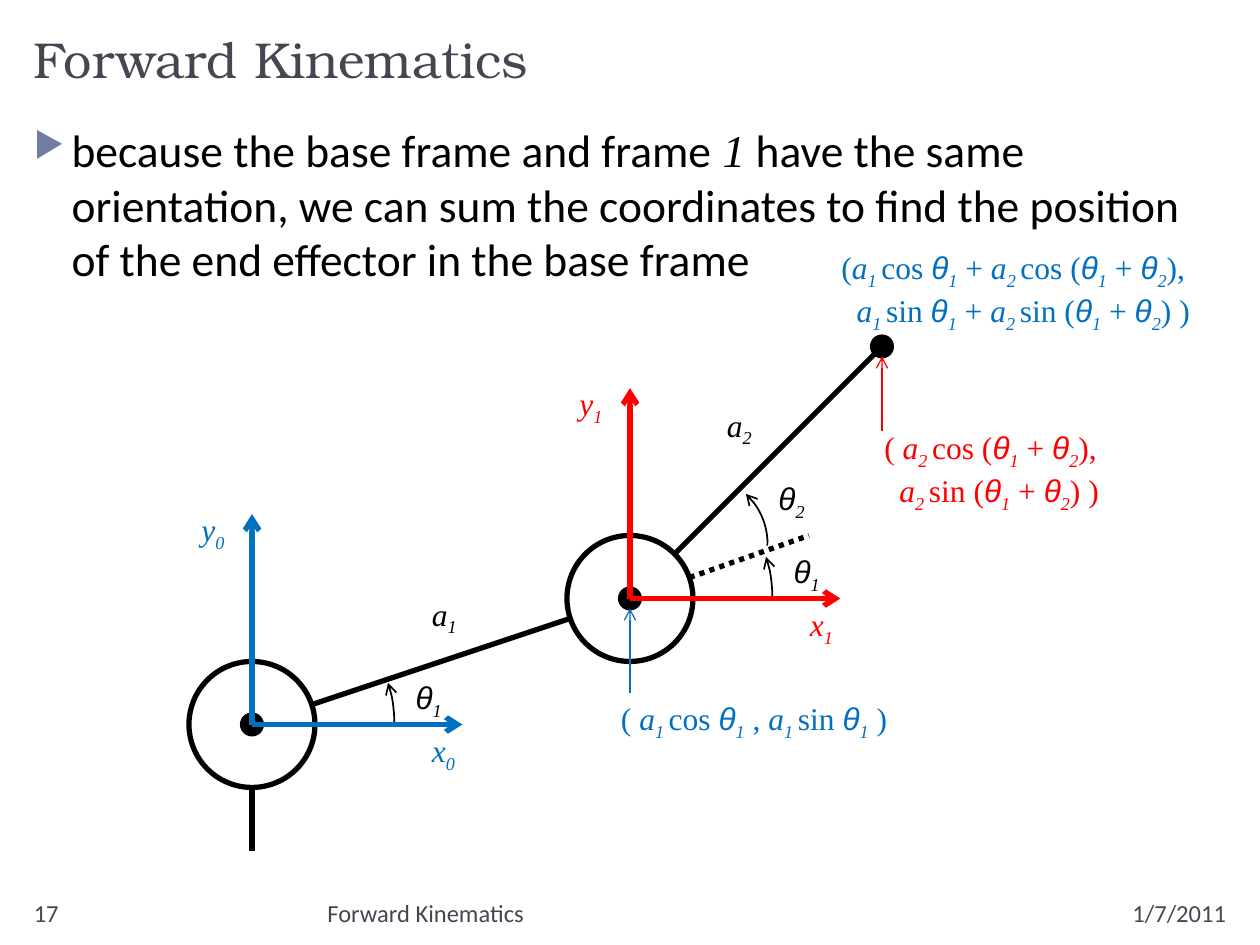
"""Build the forward kinematics slide of a two-link planar arm."""
from dataclasses import dataclass
from itertools import groupby

from lxml.etree import SubElement
from pptx import Presentation
from pptx.dml.color import RGBColor
from pptx.enum.dml import MSO_LINE
from pptx.enum.shapes import MSO_CONNECTOR, MSO_SHAPE
from pptx.enum.text import MSO_ANCHOR, PP_ALIGN
from pptx.oxml.ns import qn
from pptx.util import Inches, Pt

COLORS = {
    "black": "000000", "white": "FFFFFF", "slate": "464653",
    "bullet": "727CA3", "base": "0070C0", "joint": "FF0000",
}
SERIF = "Times New Roman"
BASE, JOINT, EFFECTOR = (2, 5.75), (5, 4.75), (7, 2.75)


@dataclass(frozen=True)
class Line:
    start: tuple
    end: tuple
    color: str = "black"
    width: float = 3
    arrow: bool = False
    dotted: bool = False


@dataclass(frozen=True)
class Label:
    left: float
    top: float
    width: float
    lines: tuple
    color: str = "black"


@dataclass(frozen=True)
class Arc:
    start: tuple
    control_one: tuple
    control_two: tuple
    end: tuple


LINKS = (
    Line((2, 6.75), (2, 5.83)),
    Line(JOINT, (6.42, 4.25), dotted=True),
    Line(JOINT, EFFECTOR),
    Line(BASE, JOINT),
)
POINTERS = (
    Line((5, 5.5), (5, 4.83), "base", 0.75, arrow=True),
    Line((7, 3.42), (7, 2.83), "joint", 0.75, arrow=True),
)
LABELS = (
    Label(3.33, 4.67, 0.41, ("a[1]",)),
    Label(5.67, 3.17, 0.41, ("a[2]",)),
    Label(6.08, 3.75, 0.42, ("θ[2]",)),
    Label(3.2, 5.33, 0.42, ("θ[1]",)),
    Label(6.2, 4.33, 0.42, ("θ[1]",)),
    Label(4.83, 5.5, 2.4, ("( a[1 ]cos θ[1] , a[1 ]sin θ[1] )",), "base"),
    Label(6.92, 3.35, 2.02, ("( a[2 ]cos (θ[1] + θ[2]),", "a[2 ]sin (θ[1] + θ[2]) )"), "joint"),
    Label(6.58, 1.92, 3.15, ("(a[1 ]cos θ[1] + a[2 ]cos (θ[1] + θ[2]),",
                             "a[1 ]sin θ[1] + a[2 ]sin (θ[1] + θ[2]) )"), "base"),
)


def rgb(name: str) -> RGBColor:
    return RGBColor.from_string(COLORS[name])


def add_box(page, left: float, top: float, width: float, height: float, anchor=MSO_ANCHOR.TOP):
    box = page.shapes.add_textbox(Inches(left), Inches(top), Inches(width), Inches(height))
    box.text_frame.word_wrap = True
    box.text_frame.vertical_anchor = anchor
    return box


def add_span(para, text: str, *, size: float, font: str, color: str,
             italic: bool = False, subscript: bool = False) -> None:
    span = para.add_run()
    span.text = text
    span.font.size = Pt(size)
    span.font.name = font
    span.font.italic = italic
    span.font.color.rgb = rgb(color)
    if subscript:
        span.font._element.set("baseline", "-25000")


def add_arrowhead(shape, end: str) -> None:
    SubElement(shape.line._get_or_add_ln(), qn(f"a:{end}"), type="arrow")


def add_line(page, line: Line) -> None:
    points = [Inches(value) for value in (*line.start, *line.end)]
    connector = page.shapes.add_connector(MSO_CONNECTOR.STRAIGHT, *points)
    connector.line.color.rgb = rgb(line.color)
    connector.line.width = Pt(line.width)
    if line.dotted:
        connector.line.dash_style = MSO_LINE.ROUND_DOT
    if line.arrow:
        add_arrowhead(connector, "tailEnd")
    SubElement(connector._element.spPr, qn("a:effectLst"))


def add_circle(page, center: tuple, diameter: float, fill: str, width: float) -> None:
    left, top = (Inches(value - diameter / 2) for value in center)
    circle = page.shapes.add_shape(MSO_SHAPE.OVAL, left, top, Inches(diameter), Inches(diameter))
    circle.shadow.inherit = False
    circle.fill.solid()
    circle.fill.fore_color.rgb = rgb(fill)
    circle.line.color.rgb = rgb("black")
    circle.line.width = Pt(width)


def add_arc(page, arc: Arc, steps: int = 10) -> None:
    def point(t: float) -> tuple:
        weights = ((1 - t) ** 3, 3 * t * (1 - t) ** 2, 3 * t * t * (1 - t), t ** 3)
        corners = (arc.start, arc.control_one, arc.control_two, arc.end)
        return tuple(Inches(sum(w * corner[axis] for w, corner in zip(weights, corners)))
                     for axis in (0, 1))

    points = [point(step / steps) for step in range(steps + 1)]
    builder = page.shapes.build_freeform(*points[0])
    builder.add_line_segments(points[1:], close=False)
    curve = builder.convert_to_shape()
    curve.shadow.inherit = False
    curve.fill.background()
    curve.line.color.rgb = rgb("black")
    curve.line.width = Pt(1)
    add_arrowhead(curve, "headEnd")


def split_math(text: str) -> list:
    marked, inside = [], False
    for char, following in zip(text, text[1:] + " "):
        if char in "[]":
            inside = char == "["
        elif inside:
            marked.append(("subscript", char))
        elif following == "[":
            marked.append(("greek" if char == "θ" else "variable", char))
        else:
            marked.append(("plain", char))
    return [(kind, "".join(char for _, char in group))
            for kind, group in groupby(marked, key=lambda item: item[0])]


def add_label(page, label: Label) -> None:
    box = add_box(page, label.left, label.top, label.width, 0.1 + 0.3 * len(label.lines))
    frame = box.text_frame
    frame.margin_right = 0
    for index, line in enumerate(label.lines):
        para = frame.add_paragraph() if index else frame.paragraphs[0]
        if index:
            para._p.get_or_add_pPr().set("marL", str(Inches(0.12)))
        for kind, text in split_math(line):
            add_span(para, text, size=18, font="Arial" if kind == "greek" else SERIF,
                     color=label.color, italic=kind != "plain", subscript=kind == "subscript")


def add_frame(page, origin: tuple, color: str, number: int) -> None:
    x, y = origin
    add_line(page, Line(origin, (x, y - 1.67), color, arrow=True))
    add_line(page, Line(origin, (x + 1.67, y), color, arrow=True))
    add_label(page, Label(x + 1.33, y, 0.41, (f"x[{number}]",), color))
    add_label(page, Label(x - 0.5, y - 1.75, 0.41, (f"y[{number}]",), color))


def add_body(page) -> None:
    para = add_box(page, 0.17, 0.92, 9.67, 6).text_frame.paragraphs[0]
    para.space_before = Pt(6)
    properties = para._p.get_or_add_pPr()
    properties.set("marL", str(Inches(0.3)))
    properties.set("indent", str(Inches(-0.3)))
    SubElement(SubElement(properties, qn("a:buClr")), qn("a:srgbClr"), val=COLORS["bullet"])
    SubElement(properties, qn("a:buSzPct"), val="76000")
    SubElement(properties, qn("a:buChar"), char="▶")
    add_span(para, "because the base frame and frame ", size=26, font="Calibri", color="black")
    add_span(para, "1", size=26, font=SERIF, color="black", italic=True)
    add_span(para, " have the same orientation, we can sum the coordinates to find the position "
             "of the end effector in the base frame", size=26, font="Calibri", color="black")


def main() -> None:
    deck = Presentation()
    deck.slide_width, deck.slide_height = Inches(10), Inches(7.5)
    page = deck.slides.add_slide(deck.slide_layouts[6])
    title = add_box(page, 0.17, 0.17, 9.67, 0.58, MSO_ANCHOR.BOTTOM)
    add_span(title.text_frame.paragraphs[0], "Forward Kinematics", size=28.8,
             font="TeX Gyre Bonum", color="slate")
    add_body(page)
    for left, width, text, align in ((0.17, 2.17, "17", PP_ALIGN.LEFT),
                                     (2.5, 5.33, "Forward Kinematics", PP_ALIGN.LEFT),
                                     (8, 1.83, "1/7/2011", PP_ALIGN.RIGHT)):
        para = add_box(page, left, 7.08, width, 0.27).text_frame.paragraphs[0]
        para.alignment = align
        add_span(para, text, size=14, font="Calibri", color="slate")
    for link in LINKS:
        add_line(page, link)
    for center in (BASE, JOINT):
        add_circle(page, center, 1, "white", 3)
    for center in (BASE, JOINT, EFFECTOR):
        add_circle(page, center, 0.17, "black", 1.5)
    add_arc(page, Arc((5.92, 3.92), (6.02, 4.01), (6.1, 4.17), (6.09, 4.33)))
    for x, y in (BASE, JOINT):
        add_arc(page, Arc((x + 1.08, y - 0.33), (x + 1.11, y - 0.25), (x + 1.13, y - 0.13), (x + 1.13, y)))
    add_frame(page, BASE, "base", 0)
    add_frame(page, JOINT, "joint", 1)
    for pointer in POINTERS:
        add_line(page, pointer)
    for label in LABELS:
        add_label(page, label)
    deck.save("out.pptx")


if __name__ == "__main__":
    main()
